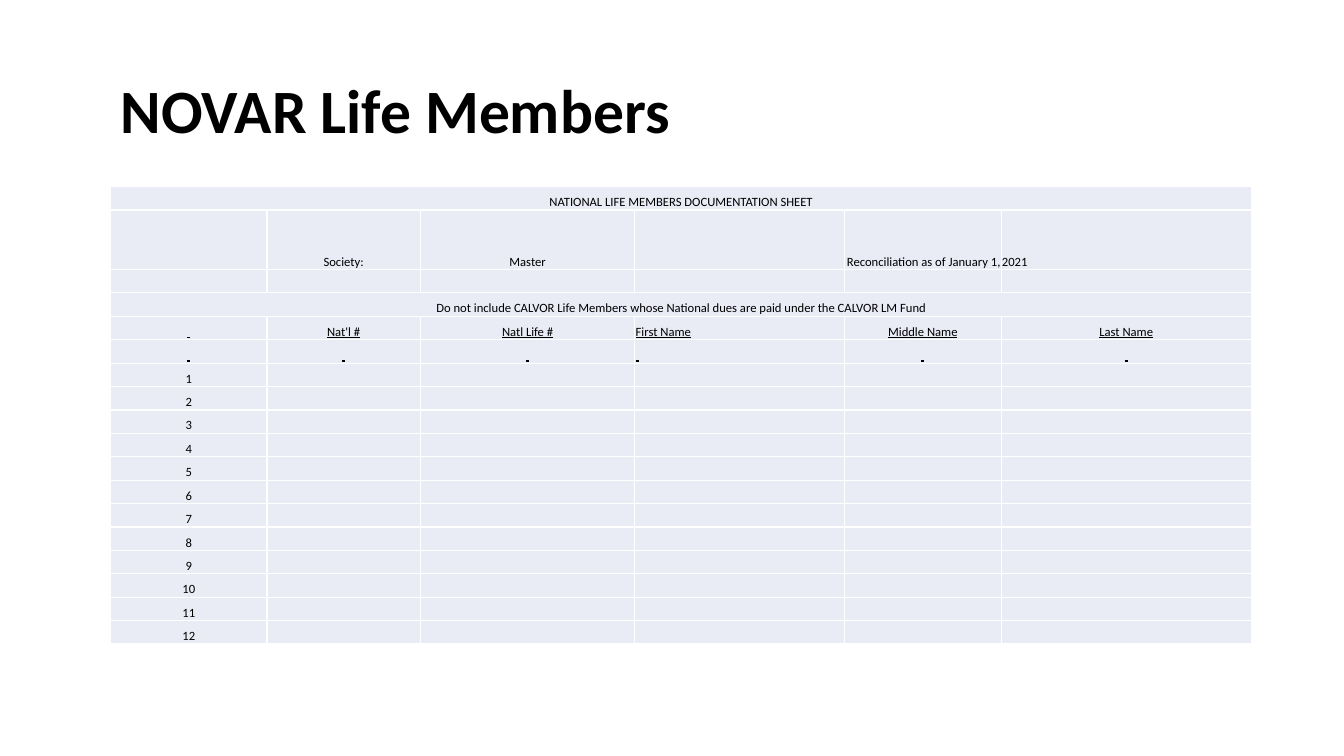
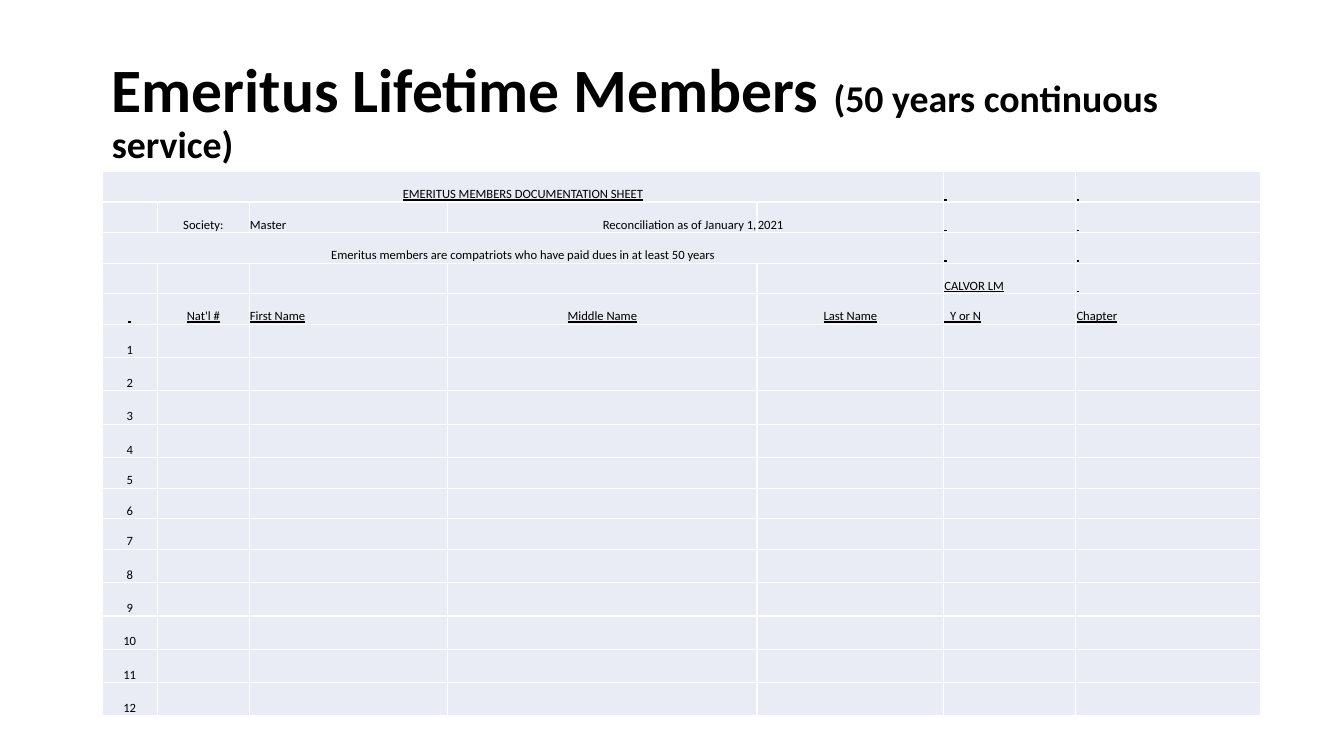
from lxml.etree import SubElement
from pptx import Presentation
from pptx.dml.color import RGBColor
from pptx.enum.text import MSO_ANCHOR, PP_ALIGN
from pptx.oxml.ns import qn
from pptx.util import Cm, Pt

COLORS = {"text": "000000", "cell": "E9EBF5", "border": "FFFFFF"}
ALIGNMENTS = {"l": PP_ALIGN.LEFT, "c": PP_ALIGN.CENTER, "r": PP_ALIGN.RIGHT}
BLANK = " "
AS_OF = ["Reconciliation as of January 1,", "2021"]
AS_OF_ALIGNMENTS = dict(zip(AS_OF, "rl"))
MEMBER_NUMBERS = [[str(number)] for number in range(1, 13)]


class MemberDeck:
    """Holds the deck style and the slide being filled."""

    font_name = "Calibri"
    title_size = 44
    cell_size = 9
    border_width = 1

    def __init__(self):
        self.deck = Presentation()
        self.deck.slide_width, self.deck.slide_height = Cm(33.87), Cm(19.05)
        self.slide = None

    def new_slide(self):
        self.slide = self.deck.slides.add_slide(self.deck.slide_layouts[6])

    def run(self, paragraph, text, size, bold=False, underline=False):
        run = paragraph.add_run()
        run.text = text
        run.font.name = self.font_name
        run.font.size = Pt(size)
        run.font.bold = bold
        run.font.underline = underline
        run.font.color.rgb = RGBColor.from_string(COLORS["text"])

    def title(self, left, width, heading, remark=""):
        box = self.slide.shapes.add_textbox(Cm(left), Cm(1.02), Cm(width), Cm(3.68))
        frame = box.text_frame
        frame.word_wrap = True
        frame.vertical_anchor = MSO_ANCHOR.MIDDLE
        paragraph = frame.paragraphs[0]
        paragraph.line_spacing = 0.9
        self.run(paragraph, heading, self.title_size, bold=True)
        if remark:
            self.run(paragraph, remark, 27, bold=True)

    def borders(self, cell):
        properties = cell._tc.get_or_add_tcPr()
        for side in ("a:lnL", "a:lnR", "a:lnT", "a:lnB"):
            line = SubElement(properties, qn(side), w=str(Pt(self.border_width)))
            fill = SubElement(line, qn("a:solidFill"))
            SubElement(fill, qn("a:srgbClr"), val=COLORS["border"])

    def cell(self, cell, text, alignment, underline):
        self.borders(cell)
        cell.fill.solid()
        cell.fill.fore_color.rgb = RGBColor.from_string(COLORS["cell"])
        cell.vertical_anchor = MSO_ANCHOR.BOTTOM
        cell.margin_left = cell.margin_right = cell.margin_top = Cm(0.02)
        cell.margin_bottom = 0
        paragraph = cell.text_frame.paragraphs[0]
        paragraph.alignment = ALIGNMENTS[alignment]
        if text:
            self.run(paragraph, text, self.cell_size, underline=underline)
        else:
            SubElement(paragraph._p, qn("a:endParaRPr"), sz=str(self.cell_size * 100))

    def sheet(self, left, top, widths, heights, rows, alignments, banners, span, underlined):
        frame = self.slide.shapes.add_table(
            len(rows), len(widths), Cm(left), Cm(top), Cm(sum(widths)), Cm(sum(heights)))
        table = frame.table
        table.first_row = table.horz_banding = False
        for column, width in zip(table.columns, widths):
            column.width = Cm(width)
        for row, height in zip(table.rows, heights):
            row.height = Cm(height)
        for row_index, texts in enumerate(rows):
            padded = texts + [""] * (len(widths) - len(texts))
            for column_index, text in enumerate(padded):
                alignment = AS_OF_ALIGNMENTS.get(text, alignments[column_index])
                self.cell(table.cell(row_index, column_index), text, alignment,
                          text == BLANK or row_index in underlined)
        for banner in banners:
            table.cell(banner, 0).merge(table.cell(banner, span - 1))


def life_members(deck):
    deck.new_slide()
    deck.title(2.79, 28.75, "NOVAR Life Members")
    rows = [
        ["NATIONAL LIFE MEMBERS DOCUMENTATION SHEET"],
        ["", "Society:", "Master", "", *AS_OF],
        [],
        ["Do not include CALVOR Life Members whose National dues are paid "
         "under the CALVOR LM Fund"],
        [BLANK, "Nat'l #", "Natl Life #", "First Name", "Middle Name", "Last Name"],
        [BLANK] * 6,
    ] + MEMBER_NUMBERS
    deck.sheet(2.79, 4.7, [3.94, 3.86, 5.41, 5.28, 3.95, 6.3],
               [0.59, 1.5] + [0.59] * 16, rows, "ccclcc",
               banners=(0, 3), span=6, underlined=(4,))


def emeritus_members(deck):
    deck.new_slide()
    deck.title(2.57, 28.98, "Emeritus Lifetime Members ", "(50 years continuous service)")
    rows = [
        ["EMERITUS MEMBERS DOCUMENTATION SHEET", "", "", "", "", BLANK, BLANK],
        ["", "Society:", "Master", *AS_OF, BLANK, BLANK],
        ["Emeritus members are compatriots who have paid dues in at least 50 years",
         "", "", "", "", BLANK, BLANK],
        ["", "", "", "", "", "CALVOR LM", BLANK],
        [BLANK, "Nat'l #", "First Name", "Middle Name", "Last Name", "  Y or N", "Chapter"],
    ] + MEMBER_NUMBERS
    low, high = 0.77, 0.84
    deck.sheet(2.57, 4.32, [1.4, 2.31, 5, 7.8, 4.7, 3.33, 4.67],
               [low] * 5 + [high] * 4 + [low] * 3 + [high] * 5, rows, "cclccll",
               banners=(0, 2), span=5, underlined=(0, 3, 4))


def main():
    deck = MemberDeck()
    life_members(deck)
    emeritus_members(deck)
    deck.deck.save("out.pptx")


if __name__ == "__main__":
    main()
